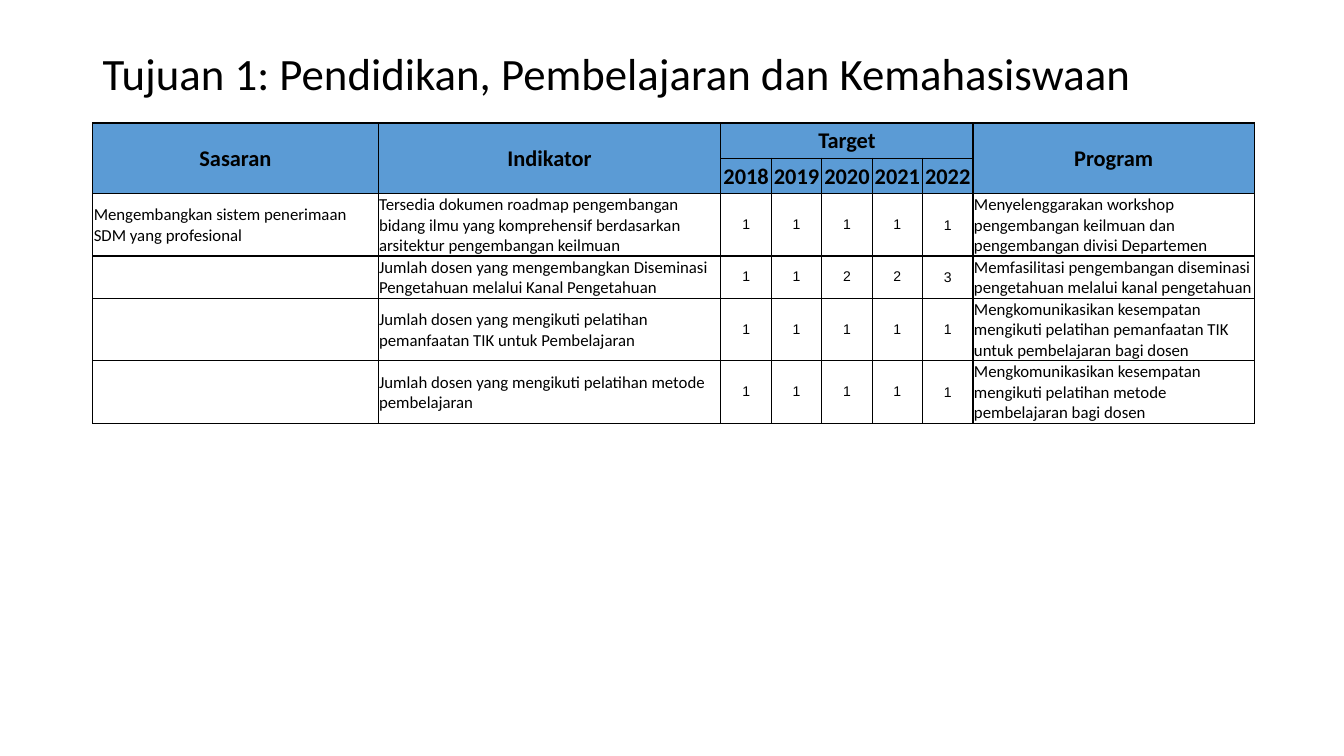
from dataclasses import dataclass

from lxml import etree
from pptx import Presentation
from pptx.dml.color import RGBColor
from pptx.enum.text import MSO_ANCHOR, PP_ALIGN
from pptx.oxml.ns import qn
from pptx.util import Inches, Pt

MID = MSO_ANCHOR.MIDDLE
LEFT, CENTER = PP_ALIGN.LEFT, PP_ALIGN.CENTER

# Content
TITLE = "Tujuan 1: Pendidikan, Pembelajaran dan Kemahasiswaan"
YEARS = ["2018", "2019", "2020", "2021", "2022"]
HEADS = ["Sasaran", "Indikator", "Target", "Program"]
GOALS = [
    ("Mengembangkan sistem penerimaan SDM yang profesional",
     "Tersedia dokumen roadmap pengembangan bidang ilmu yang komprehensif "
     "berdasarkan arsitektur pengembangan keilmuan",
     [1, 1, 1, 1, 1],
     "Menyelenggarakan workshop pengembangan keilmuan dan pengembangan "
     "divisi Departemen"),
    ("",
     "Jumlah dosen yang mengembangkan Diseminasi Pengetahuan melalui "
     "Kanal Pengetahuan",
     [1, 1, 2, 2, 3],
     "Memfasilitasi pengembangan diseminasi pengetahuan melalui kanal "
     "pengetahuan"),
    ("",
     "Jumlah dosen yang mengikuti pelatihan pemanfaatan TIK untuk Pembelajaran",
     [1, 1, 1, 1, 1],
     "Mengkomunikasikan kesempatan mengikuti pelatihan pemanfaatan TIK "
     "untuk pembelajaran bagi dosen"),
    ("",
     "Jumlah dosen yang mengikuti pelatihan metode pembelajaran",
     [1, 1, 1, 1, 1],
     "Mengkomunikasikan kesempatan mengikuti pelatihan metode pembelajaran "
     "bagi dosen"),
]


@dataclass(frozen=True)
class Theme:
    ink: str = "000000"
    head: str = "5B9BD5"
    body: str = "Calibri"
    digit: str = "Arial"
    title_pt: int = 32
    head_pt: int = 16
    text_pt: int = 12
    digit_pt: int = 10


T = Theme()

# Grid, in inches
SIDE, WIDE = 0.92, 11.5
TITLE_TOP, TITLE_HIGH = 0.4, 0.71
GRID_TOP = 1.22
COLS = [2.83, 3.4] + [0.5] * len(YEARS) + [2.79]
ROWS = [0.35, 0.35, 0.62, 0.42, 0.62, 0.62]
FIRST = 2  # first year column
LAST = len(COLS) - 1


def write(frame, text, size=T.text_pt, font=T.body, bold=False, align=LEFT,
          space=None):
    para = frame.paragraphs[0]
    para.alignment = align
    para.line_spacing = space
    face = para.font
    if text:
        run = para.add_run()
        run.text = text
        face = run.font
    face.size, face.name, face.bold = Pt(size), font, bold
    face.color.rgb = RGBColor.from_string(T.ink)


def edge(cell):
    props = cell._tc.get_or_add_tcPr()
    for i, side in enumerate(("lnL", "lnR", "lnT", "lnB")):
        line = etree.Element(qn("a:" + side), w=str(Pt(1)))
        fill = etree.SubElement(line, qn("a:solidFill"))
        etree.SubElement(fill, qn("a:srgbClr"), val=T.ink)
        props.insert(i, line)


def put(cell, text, fill=None, pad=(0.01, 0), **style):
    cell.vertical_anchor = MID
    cell.margin_left = cell.margin_right = Inches(0.01)
    cell.margin_top, cell.margin_bottom = map(Inches, pad)
    if fill:
        cell.fill.solid()
        cell.fill.fore_color.rgb = RGBColor.from_string(fill)
    else:
        cell.fill.background()
    edge(cell)
    write(cell.text_frame, text, **style)


def main():
    deck = Presentation()
    deck.slide_width, deck.slide_height = Inches(13.33), Inches(7.5)
    slide = deck.slides.add_slide(deck.slide_layouts[6])

    # Title
    box = slide.shapes.add_textbox(
        *map(Inches, (SIDE, TITLE_TOP, WIDE, TITLE_HIGH)))
    box.text_frame.word_wrap = True
    box.text_frame.vertical_anchor = MID
    write(box.text_frame, TITLE, size=T.title_pt, space=0.9)

    # Table
    grid = slide.shapes.add_table(
        len(ROWS), len(COLS),
        *map(Inches, (SIDE, GRID_TOP, WIDE, sum(ROWS)))).table
    grid.first_row = grid.horz_banding = False
    for col, width in zip(grid.columns, COLS):
        col.width = Inches(width)
    for row, high in zip(grid.rows, ROWS):
        row.height = Inches(high)

    # Two header rows
    goal, mark, aim, plan = HEADS
    gap = [""] * (len(YEARS) - 1)
    tops = [[goal, mark, aim, *gap, plan], ["", "", *YEARS, ""]]
    for r, texts in enumerate(tops):
        for c, text in enumerate(texts):
            put(grid.cell(r, c), text, fill=T.head, size=T.head_pt,
                bold=True, align=CENTER)
    for c in (0, 1, LAST):
        grid.cell(0, c).merge(grid.cell(1, c))
    grid.cell(0, FIRST).merge(grid.cell(0, LAST - 1))

    # Goals with their yearly targets
    for r, (goal, mark, aims, plan) in enumerate(GOALS, len(tops)):
        for c, text in ((0, goal), (1, mark), (LAST, plan)):
            put(grid.cell(r, c), text)
        for c, aim in enumerate(aims, FIRST):
            pad = (0.01, 0) if c == LAST - 1 else (0.03, 0.03)
            put(grid.cell(r, c), str(aim), pad=pad, size=T.digit_pt,
                font=T.digit, align=CENTER)

    deck.save("out.pptx")


if __name__ == "__main__":
    main()
